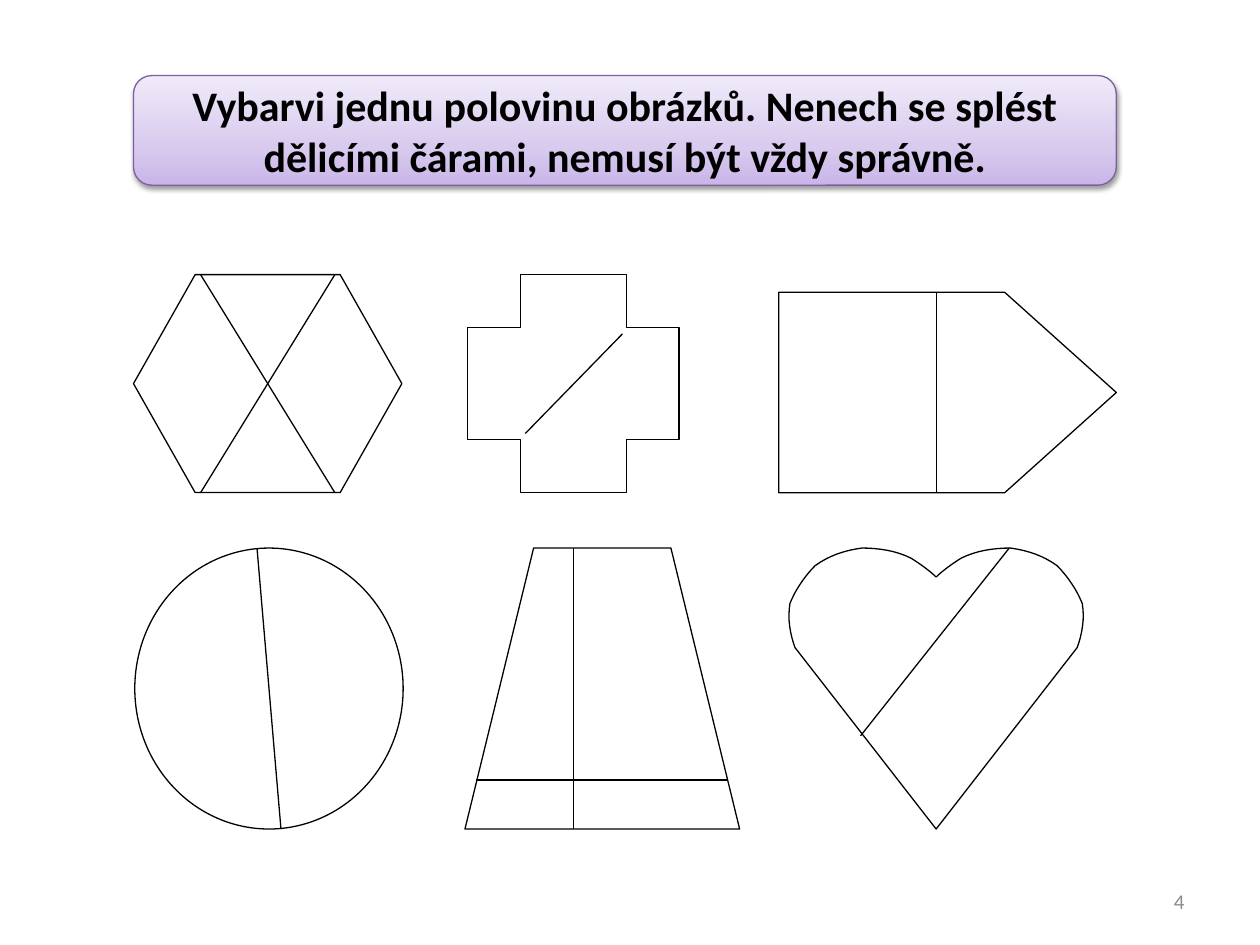
from copy import deepcopy

from lxml.etree import SubElement
from pptx import Presentation
from pptx.dml.color import RGBColor
from pptx.enum.shapes import MSO_CONNECTOR as Connector, MSO_SHAPE as Shape
from pptx.enum.text import MSO_ANCHOR as Anchor, PP_ALIGN as Align
from pptx.oxml.ns import qn
from pptx.util import Inches, Pt

BLACK = RGBColor(0x00, 0x00, 0x00)
WHITE = RGBColor(0xFF, 0xFF, 0xFF)
GREY = RGBColor(0x8C, 0x8C, 0x8C)
PURPLE = RGBColor(0x7D, 0x60, 0xA0)
BANNER_STOPS = [
    (0, RGBColor(0xC9, 0xB5, 0xE8)),
    (0.35, RGBColor(0xD8, 0xCB, 0xEE)),
    (1, RGBColor(0xF0, 0xEA, 0xF9)),
]
BANNER_TEXT = ("Vybarvi jednu polovinu obrázků. Nenech se splést "
               "dělicími čárami, nemusí být vždy správně.")

# Right lobe of the heart as Bezier segments: distance from its axis and top.
HEART_NOTCH = (0, 0.23)
HEART_LOBE = [
    [(0.05, 0.18), (0.15, 0.11), (0.20, 0.08)],
    [(0.32, 0.02), (0.46, 0), (0.59, 0)],
    [(0.73, 0.02), (0.85, 0.06), (0.96, 0.14)],
    [(1.05, 0.23), (1.12, 0.34), (1.16, 0.44)],
    [(1.18, 0.56), (1.16, 0.68), (1.12, 0.79)],
]
CURVE_STEPS = 8


def style_outline(shape, color=BLACK):
    shape.shadow.inherit = False
    shape.line.color.rgb = color
    shape.line.width = Pt(0.75)


def style_figure(figure):
    figure.fill.solid()
    figure.fill.fore_color.rgb = WHITE
    style_outline(figure)


def add_figure(shapes, kind, box, adjustments=()):
    figure = shapes.add_shape(kind, *map(Inches, box))
    for index, value in enumerate(adjustments):
        figure.adjustments[index] = value
    style_figure(figure)


def add_outline(shapes, points):
    corners = [(Inches(x), Inches(y)) for x, y in points]
    builder = shapes.build_freeform(*corners[0])
    builder.add_line_segments(corners[1:], close=True)
    style_figure(builder.convert_to_shape())


def add_divider(shapes, box, start, end):
    """Draw a line between two points given relative to the box corner."""
    left, top = box[:2]
    ends = [left + start[0], top + start[1], left + end[0], top + end[1]]
    line = shapes.add_connector(Connector.STRAIGHT, *map(Inches, ends))
    line.line.color.rgb = BLACK
    line.line.width = Pt(0.75)
    SubElement(line._element.spPr, qn("a:effectLst"))


def add_text(shape, text, align, color, font_values):
    frame = shape.text_frame
    frame.word_wrap = True
    frame.vertical_anchor = Anchor.MIDDLE
    para = frame.paragraphs[0]
    para.alignment = align
    span = para.add_run()
    span.text = text
    span.font.color.rgb = color
    for name, value in font_values.items():
        setattr(span.font, name, value)


def add_banner(shapes, box):
    banner = shapes.add_shape(Shape.ROUNDED_RECTANGLE, *map(Inches, box))
    style_outline(banner, PURPLE)
    fill = banner.fill
    fill.gradient()
    fill.gradient_angle = 90
    stop_list = banner._element.spPr.find(".//" + qn("a:gsLst"))
    stop_list.append(deepcopy(stop_list[0]))
    for stop, (position, color) in zip(fill.gradient_stops, BANNER_STOPS):
        stop.position = position
        stop.color.rgb = color
    effects = banner._element.spPr.find(qn("a:effectLst"))
    shadow = SubElement(effects, qn("a:outerShdw"), blurRad=str(Pt(3.1)),
                        dist=str(Pt(1.6)), dir="5400000", rotWithShape="0")
    shade = SubElement(shadow, qn("a:srgbClr"), val=str(BLACK))
    SubElement(shade, qn("a:alpha"), val="38000")
    add_text(banner, BANNER_TEXT, Align.CENTER, BLACK,
             {"name": "Calibri", "size": Pt(24), "bold": True})


def add_hexagon(shapes, box):
    width, height = box[2:]
    add_figure(shapes, Shape.HEXAGON, box, (0.283, 1.155))
    near, far = width / 4, width * 3 / 4
    add_divider(shapes, box, (far, 0), (near, height))
    add_divider(shapes, box, (near, 0), (far, height))


def add_circle(shapes, box):
    add_figure(shapes, Shape.OVAL, box)
    add_divider(shapes, box, (0.97, 0), (1.16, box[3]))


def add_arrow_tag(shapes, box):
    add_figure(shapes, Shape.PENTAGON, box, (0.557,))
    add_divider(shapes, box, (1.25, 0), (1.25, box[3]))


def add_cross(shapes, box):
    add_figure(shapes, Shape.CROSS, box, (0.25,))
    add_divider(shapes, box, (1.23, 0.47), (0.46, 1.26))


def bezier_points(*corners):
    """Sample a cubic Bezier curve, leaving out its start."""
    points = []
    for step in range(1, CURVE_STEPS + 1):
        t = step / CURVE_STEPS
        weights = ((1 - t) ** 3, 3 * t * (1 - t) ** 2, 3 * t * t * (1 - t), t ** 3)
        points.append(tuple(sum(w * corner[axis] for w, corner in zip(weights, corners))
                            for axis in (0, 1)))
    return points


def add_heart(shapes, box):
    left, top, width, height = box
    axis = left + width / 2
    lobe = [HEART_NOTCH]
    for segment in HEART_LOBE:
        lobe += bezier_points(lobe[-1], *segment)
    right_side = [(axis + x, top + y) for x, y in lobe]
    left_side = [(axis - x, top + y) for x, y in reversed(lobe[1:])]
    add_outline(shapes, right_side + [(axis, top + height)] + left_side)
    add_divider(shapes, box, (1.76, 0), (0.58, 1.49))


def add_trapezoid(shapes, box):
    left, top, width, height = box
    right, bottom = left + width, top + height
    inset = width / 4
    add_outline(shapes, [(left, bottom), (left + inset, top),
                         (right - inset, top), (right, bottom)])
    add_divider(shapes, box, (0.86, 0), (0.86, height))
    add_divider(shapes, box, (0.09, 1.84), (width - 0.09, 1.84))


def add_page_number(shapes, box, number):
    label = shapes.add_textbox(*map(Inches, box))
    add_text(label, number, Align.RIGHT, GREY, {"name": "Calibri", "size": Pt(12)})


def main():
    deck = Presentation()
    deck.slide_width, deck.slide_height = Inches(10), Inches(7.5)
    page = deck.slides.add_slide(deck.slide_layouts[6])
    figures = [
        (add_hexagon, (1.06, 2.18, 2.13, 1.73)),
        (add_circle, (1.07, 4.35, 2.13, 2.23)),
        (add_arrow_tag, (6.18, 2.32, 2.68, 1.59)),
        (add_cross, (3.71, 2.18, 1.68, 1.73)),
        (add_heart, (6.25, 4.35, 2.36, 2.23)),
        (add_trapezoid, (3.69, 4.35, 2.18, 2.23)),
    ]
    for add_part, box in figures:
        add_part(page.shapes.add_group_shape().shapes, box)
    add_banner(page.shapes, (1.06, 0.6, 7.8, 0.87))
    add_page_number(page.shapes, (7.17, 6.95, 2.33, 0.4), "4")
    deck.save("out.pptx")


if __name__ == "__main__":
    main()
